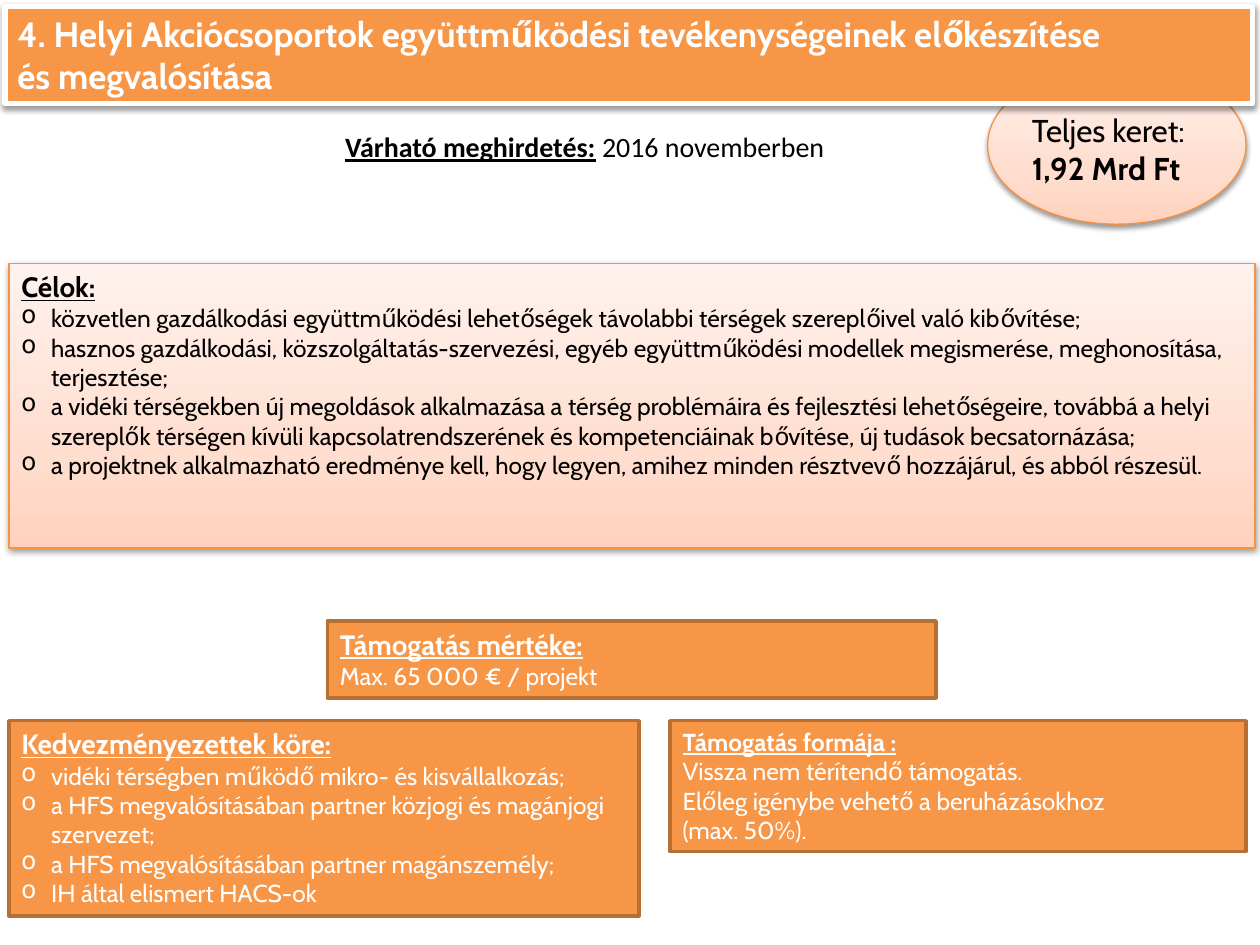
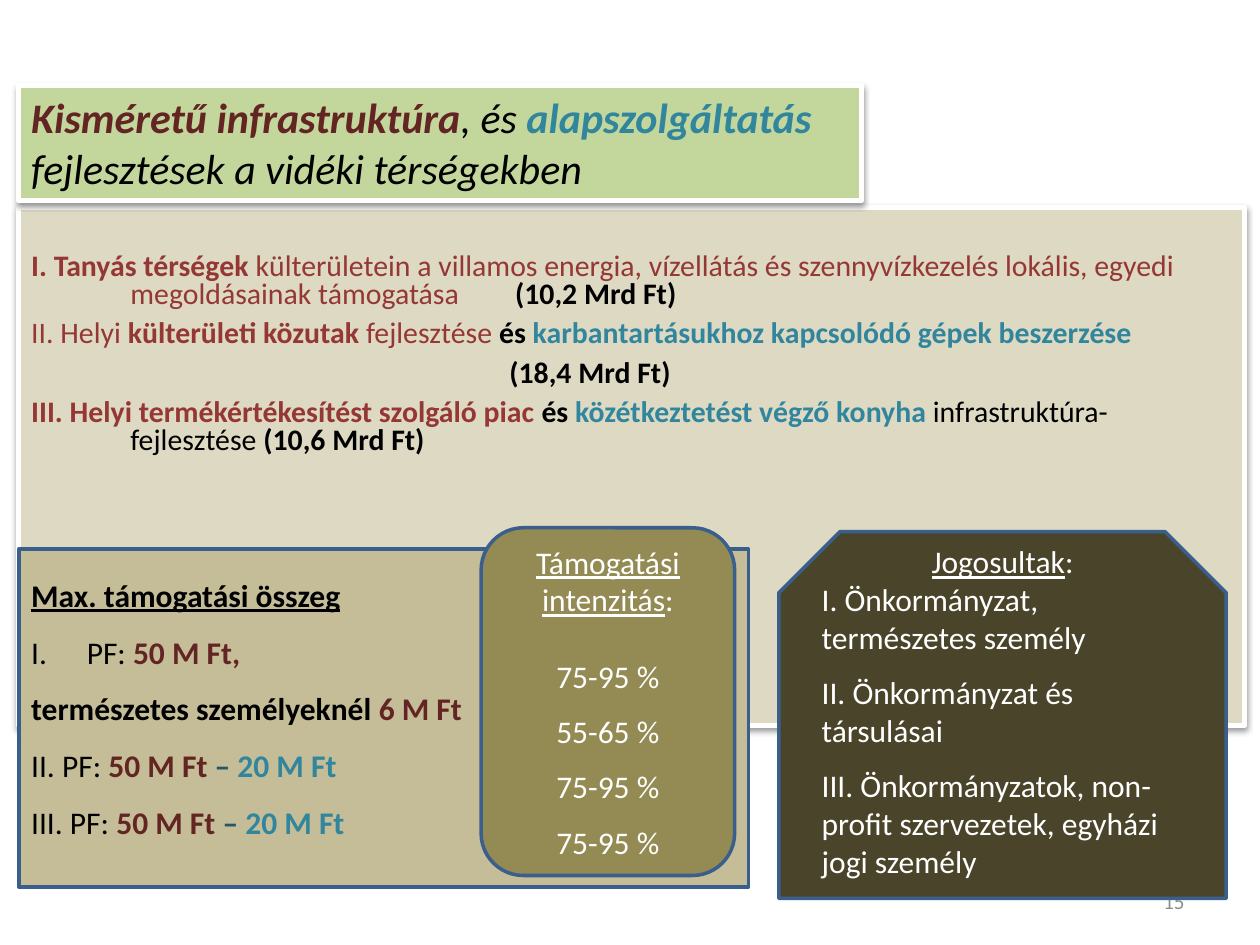
import copy

import lxml.etree
import pptx
import pptx.dml.color
import pptx.enum.shapes
import pptx.enum.text
import pptx.oxml.ns
import pptx.util

Cm = pptx.util.Cm
Pt = pptx.util.Pt
qn = pptx.oxml.ns.qn
rgb = pptx.dml.color.RGBColor.from_string
SHAPE = pptx.enum.shapes.MSO_SHAPE
ALIGN = pptx.enum.text.PP_ALIGN
ANCHOR = pptx.enum.text.MSO_ANCHOR

COLORS = {
    "white": "FFFFFF", "black": "000000", "grey": "8C8C8C",
    "orange": "F79646", "orange_edge": "B76F34", "peach_edge": "F69240",
    "green": "C3D69B", "sand": "DDD9C3", "tan": "C4BD97", "olive": "948A54",
    "dark_olive": "4A452A", "blue_edge": "3A5F8C",
    "red": "953735", "wine": "632523", "teal": "31859C", "dark_teal": "215968",
}
PEACH_STOPS = [(0, "FFD2BD"), (0.35, "FFDED0"), (1, "FFF2ED")]


def add_panel(page, at, fill, line, width, kind=SHAPE.RECTANGLE, shadow=False):
    """Add a filled shape; the fill "peach" is a vertical gradient."""
    panel = page.shapes.add_shape(kind, *[Cm(length) for length in at])
    if fill == "peach":
        panel.fill.gradient()
        panel.fill.gradient_angle = 90
        stop_list = panel.element.spPr.find(".//" + qn("a:gsLst"))
        stop_list.append(copy.deepcopy(stop_list[-1]))
        for stop, (position, color) in zip(panel.fill.gradient_stops, PEACH_STOPS):
            stop.position = position
            stop.color.rgb = rgb(color)
    else:
        panel.fill.solid()
        panel.fill.fore_color.rgb = rgb(COLORS[fill])
    panel.line.color.rgb = rgb(COLORS[line])
    panel.line.width = Pt(width)
    panel.shadow.inherit = False
    if shadow:
        effects = panel.element.spPr.find(qn("a:effectLst"))
        outer = lxml.etree.SubElement(
            effects, qn("a:outerShdw"), blurRad="40000", dist="20000",
            dir="5400000", rotWithShape="0")
        black = lxml.etree.SubElement(outer, qn("a:srgbClr"), val=COLORS["black"])
        lxml.etree.SubElement(black, qn("a:alpha"), val="38000")
    return panel


def write(box, paragraphs, font, size, color, anchor=ANCHOR.TOP, wrap=True,
          align=ALIGN.LEFT, line=1.0, after=0):
    """Fill a box with (spans, options) pairs.

    A span is (text, style, color), where style is made of the letters b, i, u.
    """
    frame = box.text_frame
    frame.word_wrap = wrap
    frame.vertical_anchor = anchor
    for index, (spans, options) in enumerate(paragraphs):
        para = frame.paragraphs[0] if index == 0 else frame.add_paragraph()
        properties = para._p.get_or_add_pPr()
        if "left" in options:
            properties.set("marL", str(Cm(options["left"])))
            properties.set("indent", str(-Cm(options.get("hang", options["left"]))))
        if "bullet" in options:
            lxml.etree.SubElement(properties, qn("a:buChar"), char=options["bullet"])
        if "number" in options:
            lxml.etree.SubElement(properties, qn("a:buAutoNum"), type=options["number"])
        para.alignment = options.get("align", align)
        para.line_spacing = line
        para.space_before = Pt(options.get("before", 0))
        para.space_after = Pt(after)
        for text, style, *own_color in spans:
            span = para.add_run()
            span.text = text
            span.font.name = font
            span.font.size = Pt(options.get("size", size))
            span.font.bold = "b" in style
            span.font.italic = "i" in style
            span.font.underline = "u" in style
            span.font.color.rgb = rgb(COLORS[own_color[0] if own_color else color])


deck = pptx.Presentation()
deck.slide_width = Cm(25.4)
deck.slide_height = Cm(19.05)
blank = deck.slide_layouts[6]
bullet = {"bullet": "o", "left": 0.6}

# Slide 1: cooperation of local action groups
page = deck.slides.add_slide(blank)
add_panel(page, (19.91, 1.32, 5.21, 3.2), "peach", "peach_edge", 0.75,
          SHAPE.OVAL, shadow=True)
title = add_panel(page, (0.1, 0.13, 25.15, 1.96), "orange", "white", 3, shadow=True)
write(title, [
    ([("4. Helyi Akciócsoportok együttműködési tevékenységeinek előkészítése", "b")], {}),
    ([("és megvalósítása", "b")], {}),
], "Cabin", 20, "white")

budget = page.shapes.add_textbox(Cm(20.55), Cm(2.11), Cm(3.94), Cm(1.8))
write(budget, [([("Teljes keret:", "")], {}), ([("1,92 Mrd Ft", "b")], {})],
      "Cabin", 18, "black", wrap=False)

goals = add_panel(page, (0.18, 5.31, 25.12, 5.74), "peach", "peach_edge", 0.75, shadow=True)
goal_texts = [
    "közvetlen gazdálkodási együttműködési lehetőségek távolabbi térségek szereplőivel "
    "való kibővítése;",
    "hasznos gazdálkodási, közszolgáltatás-szervezési, egyéb együttműködési modellek "
    "megismerése, meghonosítása, terjesztése;",
    "a vidéki térségekben új megoldások alkalmazása a térség problémáira és fejlesztési "
    "lehetőségeire, továbbá a helyi szereplők térségen kívüli kapcsolatrendszerének és "
    "kompetenciáinak bővítése, új tudások becsatornázása;",
    "a projektnek alkalmazható eredménye kell, hogy legyen, amihez minden résztvevő "
    "hozzájárul, és abból részesül.",
]
write(goals, [([("Célok:", "bu")], {"size": 16})]
      + [([(text, "")], bullet) for text in goal_texts], "Cabin", 14, "black")

launch = page.shapes.add_textbox(Cm(6.71), Cm(2.49), Cm(10.29), Cm(0.94))
write(launch, [([("Várható meghirdetés:", "bu"), (" ", "b"), ("2016 novemberben", "")], {})],
      "Calibri", 16, "black", wrap=False)

orange_boxes = [
    ((0.18, 14.53, 12.7, 3.94), "Kedvezményezettek köre:", 16, bullet, [
        "vidéki térségben működő mikro- és kisvállalkozás;",
        "a HFS megvalósításában partner közjogi és magánjogi szervezet;",
        "a HFS megvalósításában partner magánszemély;",
        "IH által elismert HACS-ok"]),
    ((13.51, 14.53, 11.61, 2.64), "Támogatás formája :", 14, {}, [
        "Vissza nem térítendő támogatás.",
        "Előleg igénybe vehető a beruházásokhoz",
        "(max. 50%)."]),
    ((6.6, 12.52, 12.27, 1.55), "Támogatás mértéke:", 16, {}, [
        "Max. 65 000 € / projekt"]),
]
for at, heading, heading_size, options, texts in orange_boxes:
    box = add_panel(page, at, "orange", "orange_edge", 2)
    write(box, [([(heading, "bu")], {"size": heading_size})]
          + [([(text, "")], options) for text in texts], "Cabin", 14, "white")

# Slide 2: small-scale infrastructure
page = deck.slides.add_slide(blank)
number = page.shapes.add_textbox(Cm(18.21), Cm(17.65), Cm(5.92), Cm(1.02))
write(number, [([("15", "")], {})], "Calibri", 12, "grey", ANCHOR.MIDDLE, align=ALIGN.RIGHT)

calls = add_panel(page, (0.38, 4.19, 24.71, 10.44), "sand", "white", 3, shadow=True)
calls.text_frame.margin_top = Cm(0.92)
hanging = {"left": 2}
write(calls, [
    ([("I. Tanyás térségek", "b"),
      (" külterületein a villamos energia, vízellátás és szennyvízkezelés lokális, "
       "egyedi megoldásainak támogatása\t ", ""),
      ("(10,2 Mrd Ft)", "b", "black")], hanging),
    ([("II. Helyi ", ""), ("külterületi közutak ", "b"), ("fejlesztése ", ""),
      ("és ", "b", "black"),
      ("karbantartásukhoz kapcsolódó gépek beszerzése", "b", "teal")], hanging),
    ([("(18,4 Mrd Ft)", "b", "black")], {"left": 9.64, "hang": 0}),
    ([("III. Helyi termékértékesítést szolgáló piac ", "b"), ("és ", "b", "black"),
      ("közétkeztetést végző konyha ", "b", "teal"),
      ("infrastruktúra-fejlesztése ", "", "black"),
      ("(10,6 Mrd Ft)", "b", "black")], hanging),
], "Calibri", 17, "red", line=0.8, after=6)

title = add_panel(page, (0.38, 1.73, 16.99, 2.31), "green", "white", 3, shadow=True)
write(title, [([("Kisméretű infrastruktúra", "bi", "wine"), (", és ", "i"),
                ("alapszolgáltatás ", "bi", "teal"),
                ("fejlesztések a vidéki térségekben", "i")], {})],
      "Calibri", 24, "black")

maximum = add_panel(page, (0.38, 11.07, 14.71, 6.81), "tan", "blue_edge", 2)
maximum.text_frame.margin_bottom = Cm(0.9)
amounts = [("50 M Ft ", "b", "wine"), ("– ", "b", "dark_teal"), ("20 M Ft", "b", "teal")]
write(maximum, [
    ([("Max. támogatási összeg", "bu")], {}),
    ([("PF: ", ""), ("50 M Ft,", "b", "wine")], {"left": 1.12, "number": "romanUcPeriod"}),
    ([("természetes személyeknél ", "b"), ("6 M Ft", "b", "wine")], {}),
    ([("II. PF: ", "")] + amounts, {}),
    ([("III. PF: ", "")] + amounts, {}),
], "Calibri", 18, "black", ANCHOR.MIDDLE, line=1.5)

intensity = add_panel(page, (9.7, 10.64, 5.11, 7.01), "olive", "blue_edge", 2,
                      SHAPE.ROUNDED_RECTANGLE)
rates = [("75-95 %", 22), ("55-65 %", 10), ("75-95 %", 10), ("75-95 %", 10)]
write(intensity, [([("Támogatási intenzitás", "u"), (":", "")], {})]
      + [([(rate, "")], {"before": gap}) for rate, gap in rates],
      "Calibri", 18, "white", ANCHOR.MIDDLE, align=ALIGN.CENTER)

eligible = add_panel(page, (15.7, 10.72, 9.02, 7.39), "dark_olive", "blue_edge", 2,
                     SHAPE.SNIP_2_SAME_RECTANGLE)
eligible.text_frame.margin_bottom = Cm(0.9)
write(eligible, [
    ([("Jogosultak", "u"), (":", "")], {"align": ALIGN.CENTER}),
    ([("I. Önkormányzat, természetes személy", "")], {}),
    ([("II. Önkormányzat és társulásai", "")], {"before": 10}),
    ([("III. Önkormányzatok, non-profit szervezetek, egyházi jogi személy", "")],
     {"before": 10}),
], "Calibri", 18, "white", ANCHOR.MIDDLE)

deck.save("out.pptx")
